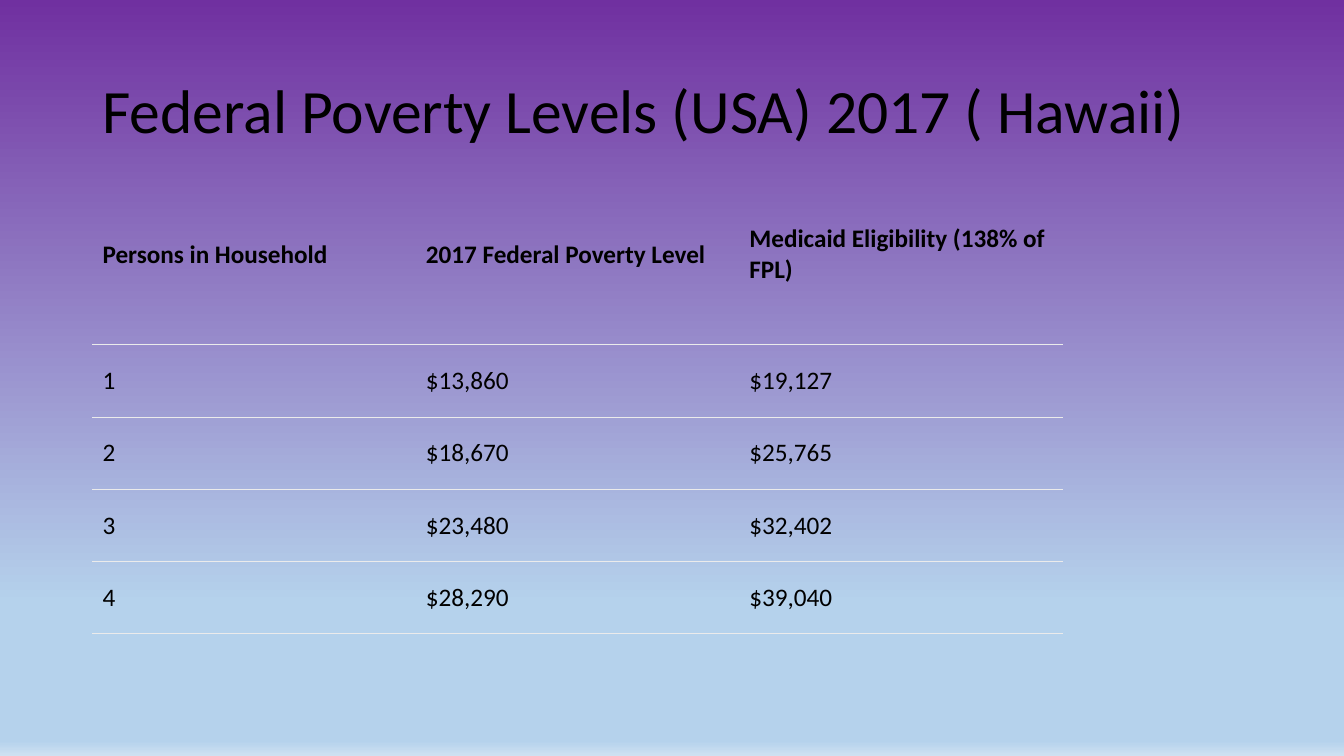
"""Build a slide with a table of 2017 federal poverty levels for Hawaii."""
from copy import deepcopy
from dataclasses import dataclass

from lxml.etree import SubElement
from pptx import Presentation
from pptx.dml.color import RGBColor
from pptx.enum.text import MSO_ANCHOR, MSO_AUTO_SIZE, PP_ALIGN
from pptx.oxml.ns import qn
from pptx.util import Cm, Pt


@dataclass(frozen=True)
class Theme:
    font: str = "Calibri"
    text: str = "000000"
    rule: str = "EBEBEB"
    rule_width: float = 0.75
    title_size: int = 44
    table_size: int = 18
    gradient: tuple = ((0, "7030A0"), (0.8, "B5D2EC"),
                       (0.98, "B5D2EC"), (1, "CEE1F2"))


THEME = Theme()


def write(tf, text, size, bold=False, spacing=1.0):
    tf.word_wrap = True
    p = tf.paragraphs[0]
    p.alignment = PP_ALIGN.LEFT
    p.line_spacing = spacing
    r = p.add_run()
    r.text = text
    r.font.name = THEME.font
    r.font.size = Pt(size)
    r.font.bold = bold
    r.font.color.rgb = RGBColor.from_string(THEME.text)


def rule_below(cell):
    ln = SubElement(cell._tc.get_or_add_tcPr(), qn("a:lnB"), w=str(Pt(THEME.rule_width)))
    fill = SubElement(ln, qn("a:solidFill"))
    SubElement(fill, qn("a:srgbClr"), val=THEME.rule)


prs = Presentation()
prs.slide_width, prs.slide_height = Cm(33.87), Cm(19.05)
s = prs.slides.add_slide(prs.slide_layouts[5])

bg = s.background.fill
bg.gradient()
bg.gradient_angle = 270
stops = s.element.find(".//" + qn("a:gsLst"))
while len(stops) < len(THEME.gradient):
    stops.append(deepcopy(stops[0]))
for stop, (position, color) in zip(bg.gradient_stops, THEME.gradient):
    stop.position = position
    stop.color.rgb = RGBColor.from_string(color)

title = s.shapes.title
title.left, title.top, title.width, title.height = Cm(2.33), Cm(1.01), Cm(29.21), Cm(3.68)
title.text_frame.vertical_anchor = MSO_ANCHOR.MIDDLE
title.text_frame.auto_size = MSO_AUTO_SIZE.NONE
write(title.text_frame, "Federal Poverty Levels (USA) 2017 ( Hawaii)",
      size=THEME.title_size, spacing=0.9)

rows = [
    ("Persons in Household", "2017 Federal Poverty Level", "Medicaid Eligibility (138% of FPL)"),
    ("1", "$13,860", "$19,127"),
    ("2", "$18,670", "$25,765"),
    ("3", "$23,480", "$32,402"),
    ("4", "$28,290", "$39,040"),
]
header_height, row_height = Cm(4.55), Cm(1.82)
table = s.shapes.add_table(len(rows), len(rows[0]), Cm(2.33), Cm(4.14), Cm(24.45),
                           header_height + row_height * (len(rows) - 1)).table
table.horz_banding = False
for i, row in enumerate(rows):
    table.rows[i].height = row_height if i else header_height
    for j, text in enumerate(row):
        cell = table.cell(i, j)
        cell.vertical_anchor = MSO_ANCHOR.MIDDLE
        rule_below(cell)
        cell.fill.background()
        write(cell.text_frame, text, size=THEME.table_size, bold=i == 0)

style = table._tbl.tblPr.find(qn("a:tableStyleId"))
style.text = "{2D5ABB26-0587-4C30-8999-92F81FD0307C}"

prs.save("out.pptx")
